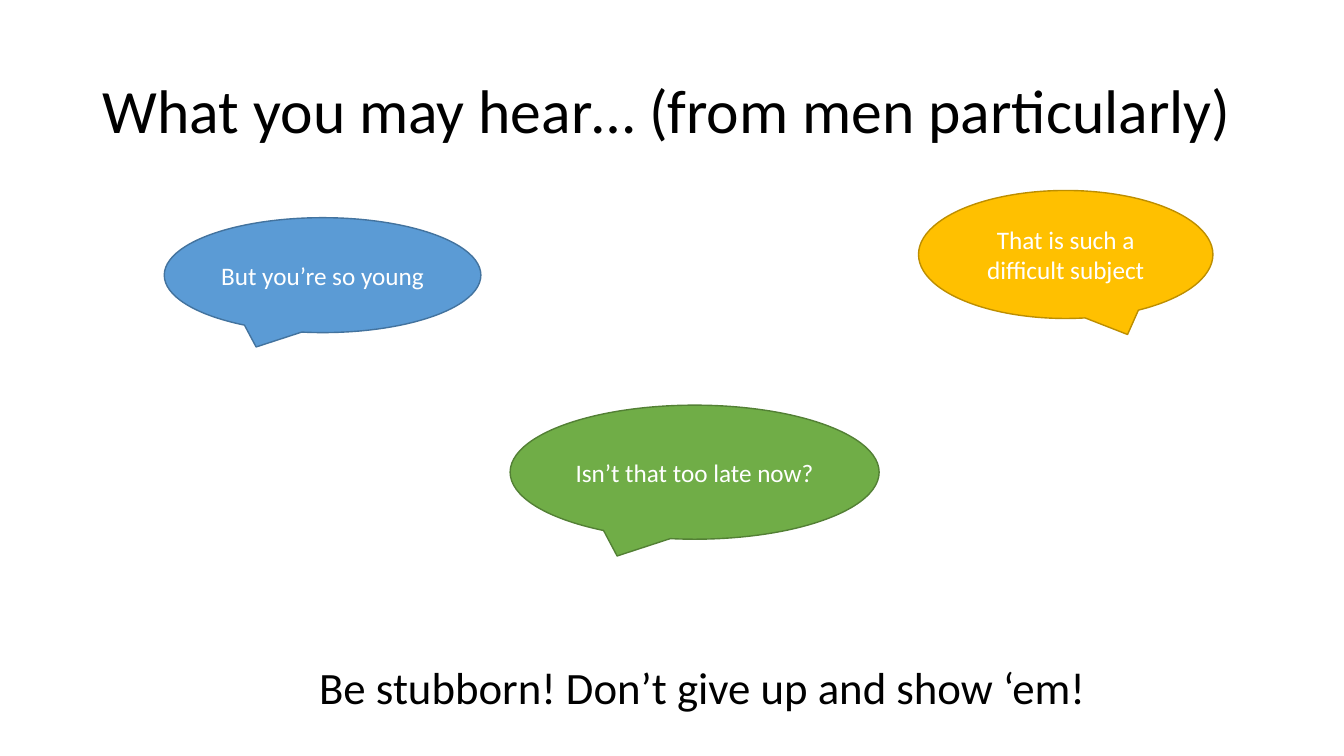
"""Build a slide of remarks in speech bubbles, with a closing call to be stubborn."""
from dataclasses import dataclass

from pptx import Presentation
from pptx.dml.color import RGBColor
from pptx.enum import shapes, text
from pptx.util import Inches, Pt

TITLE = "What you may hear… (from men particularly)"
CLOSING = "Be stubborn! Don’t give up and show ‘em!"
BUBBLES = [
    ("But you’re so young", (1.63, 2.16, 3.14, 1.14), "blue", "left"),
    ("That is such a difficult subject", (9.11, 1.89, 2.92, 1.27), "gold", "right"),
    ("Isn’t that too late now?", (5.06, 4.02, 3.66, 1.33), "green", "left"),
]
TAIL_REACH = {"left": -0.21, "right": 0.21}
TAIL_DROP = 0.625


@dataclass(frozen=True)
class Theme:
    """Colours and type sizes of the slide."""
    font: str = "Calibri"
    ink: str = "000000"
    paper: str = "FFFFFF"
    title: int = 44
    closing: int = 32
    bubble: int = 18
    outline: int = 1
    fills = {"blue": "5B9BD5", "gold": "FFC000", "green": "70AD47"}
    lines = {"blue": "43739E", "gold": "BD8E00", "green": "538035"}


THEME = Theme()


def write(frame, wording, *, size, color, align=text.PP_ALIGN.CENTER,
          anchor=text.MSO_ANCHOR.MIDDLE, spacing=1.0):
    """Put formatted wording into a text frame."""
    frame.word_wrap = True
    frame.vertical_anchor = anchor
    para = frame.paragraphs[0]
    para.alignment = align
    para.line_spacing = spacing
    span = para.add_run()
    span.text = wording
    span.font.name = THEME.font
    span.font.size = Pt(size)
    span.font.color.rgb = RGBColor.from_string(color)


def add_bubble(page, wording, place, hue, side):
    """Draw one speech bubble whose tail leans to the given side."""
    bubble = page.shapes.add_shape(
        shapes.MSO_SHAPE.OVAL_CALLOUT, *map(Inches, place))
    bubble.shadow.inherit = False
    bubble.adjustments[0] = TAIL_REACH[side]
    bubble.adjustments[1] = TAIL_DROP
    bubble.fill.solid()
    bubble.fill.fore_color.rgb = RGBColor.from_string(THEME.fills[hue])
    bubble.line.color.rgb = RGBColor.from_string(THEME.lines[hue])
    bubble.line.width = Pt(THEME.outline)
    write(bubble.text_frame, wording, size=THEME.bubble, color=THEME.paper)


def main():
    """Assemble and save the deck."""
    deck = Presentation()
    deck.slide_width, deck.slide_height = Inches(13.33), Inches(7.5)
    page = deck.slides.add_slide(deck.slide_layouts[5])

    title = page.shapes.title
    title.left, title.top, title.width, title.height = map(
        Inches, (0.92, 0.4, 11.5, 1.45))
    write(title.text_frame, TITLE, size=THEME.title, color=THEME.ink,
          align=text.PP_ALIGN.LEFT, spacing=0.9)

    for bubble in BUBBLES:
        add_bubble(page, *bubble)

    closing = page.shapes.add_textbox(*map(Inches, (1.06, 6.5, 11.82, 0.64)))
    write(closing.text_frame, CLOSING, size=THEME.closing, color=THEME.ink,
          anchor=text.MSO_ANCHOR.TOP)
    closing.text_frame.auto_size = text.MSO_AUTO_SIZE.SHAPE_TO_FIT_TEXT

    deck.save("out.pptx")


if __name__ == "__main__":
    main()
